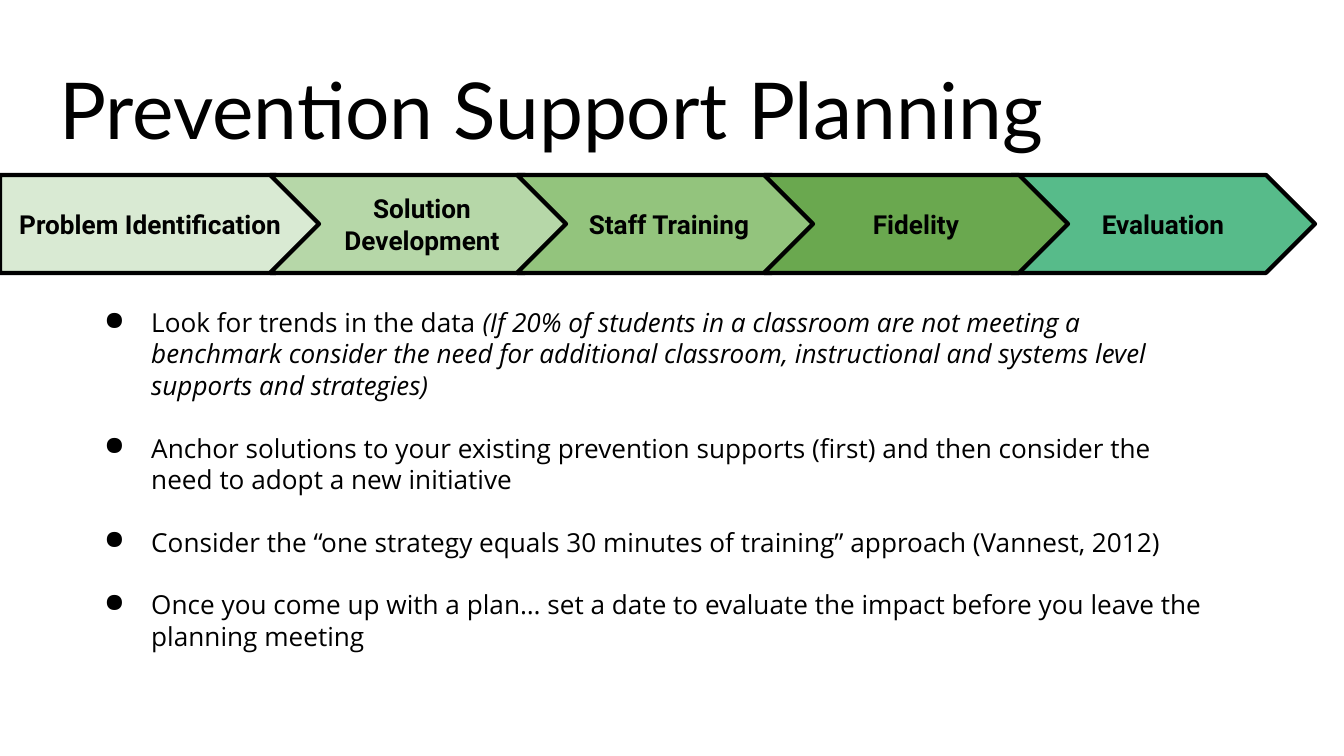
from lxml import etree
from pptx import Presentation, util as u
from pptx.dml.color import RGBColor
from pptx.enum import shapes, text
from pptx.oxml.ns import qn

BLACK = RGBColor(0, 0, 0)
WHITE = RGBColor(255, 255, 255)
PALE = RGBColor(0xD9, 0xEA, 0xD3)
LIGHT = RGBColor(0xB6, 0xD7, 0xA8)
MID = RGBColor(0x93, 0xC4, 0x7D)
DEEP = RGBColor(0x6A, 0xA8, 0x4F)
TEAL = RGBColor(0x57, 0xBB, 0x8A)

# Content
TITLE = "Prevention Support Planning"
STEPS = [
    ("Problem Identification", PALE),
    ("Solution Development", LIGHT),
    ("Staff Training", MID),
    ("Fidelity", DEEP),
    ("Evaluation", TEAL),
]
ORDER = [0, 1, 2, 4, 3]  # back to front: Fidelity overlaps Evaluation
POINTS = [  # each point is a list of (text, italic)
    [("Look for trends in the data ", False),
     ("(If 20% of students in a classroom are not meeting a benchmark consider "
      "the need for additional classroom, instructional and systems level "
      "supports and strategies)", True)],
    [("Anchor solutions to your existing prevention supports (first) and then "
      "consider the need to adopt a new initiative", False)],
    [("Consider the “one strategy equals 30 minutes of training” approach "
      "(Vannest, 2012)", False)],
    [("Once you come up with a plan… set a date to evaluate the impact before "
      "you leave the planning meeting", False)],
]

# Layout in px
FIRST_W = 325
LEFT, PITCH, STEP_W = 270, 247, 304
TOP, STEP_H = 175, 98
LEAD = u.Pt(16.8)


def px(n):
    return u.Emu(round(n * 914400 / 134.4))


def setup(shape, anchor):
    frame = shape.text_frame
    frame.word_wrap = True
    frame.vertical_anchor = anchor
    frame.margin_left = frame.margin_right = u.Inches(0.1)
    frame.margin_top = frame.margin_bottom = u.Inches(0.1)
    return frame


def add_run(para, words, size, face, bold=False, italic=False):
    run = para.add_run()
    run.text = words
    font = run.font
    font.size, font.name = u.Pt(size), face
    font.bold, font.italic = bold, italic
    font.color.rgb = BLACK


def bullet(para):
    props = para._p.get_or_add_pPr()
    props.set("marL", str(px(67)))
    props.set("indent", str(-px(47)))
    color = etree.SubElement(props, qn("a:buClr"))
    etree.SubElement(color, qn("a:srgbClr")).set("val", str(BLACK))
    etree.SubElement(props, qn("a:buChar")).set("char", "●")


deck = Presentation()
deck.slide_width, deck.slide_height = px(1344), px(756)
slide = deck.slides.add_slide(deck.slide_layouts[6])
slide.background.fill.solid()
slide.background.fill.fore_color.rgb = WHITE

# Title
box = slide.shapes.add_textbox(px(46), px(47), px(1252), px(122))
frame = setup(box, text.MSO_ANCHOR.BOTTOM)
add_run(frame.paragraphs[0], TITLE, 42, "Lato")

# Process arrows
for i in ORDER:
    label, color = STEPS[i]
    if i == 0:
        kind, left, width = shapes.MSO_SHAPE.PENTAGON, 0, FIRST_W
    else:
        kind, left, width = shapes.MSO_SHAPE.CHEVRON, LEFT + (i - 1) * PITCH, STEP_W
    step = slide.shapes.add_shape(kind, px(left), px(TOP), px(width), px(STEP_H))
    step.adjustments[0] = 0.5
    step.shadow.inherit = False
    step.fill.solid()
    step.fill.fore_color.rgb = color
    step.line.color.rgb = BLACK
    step.line.width = u.Pt(2.25)
    para = setup(step, text.MSO_ANCHOR.MIDDLE).paragraphs[0]
    para.alignment = text.PP_ALIGN.CENTER
    add_run(para, label, 14, "Roboto", bold=True)

# Bullet points
box = slide.shapes.add_textbox(px(71), px(293), px(1149), px(407))
frame = setup(box, text.MSO_ANCHOR.TOP)
for i, runs in enumerate(POINTS):
    para = frame.add_paragraph() if i else frame.paragraphs[0]
    para.line_spacing = para.space_after = LEAD
    bullet(para)
    for words, italic in runs:
        add_run(para, words, 14, "Open Sans", italic=italic)

deck.save("out.pptx")
